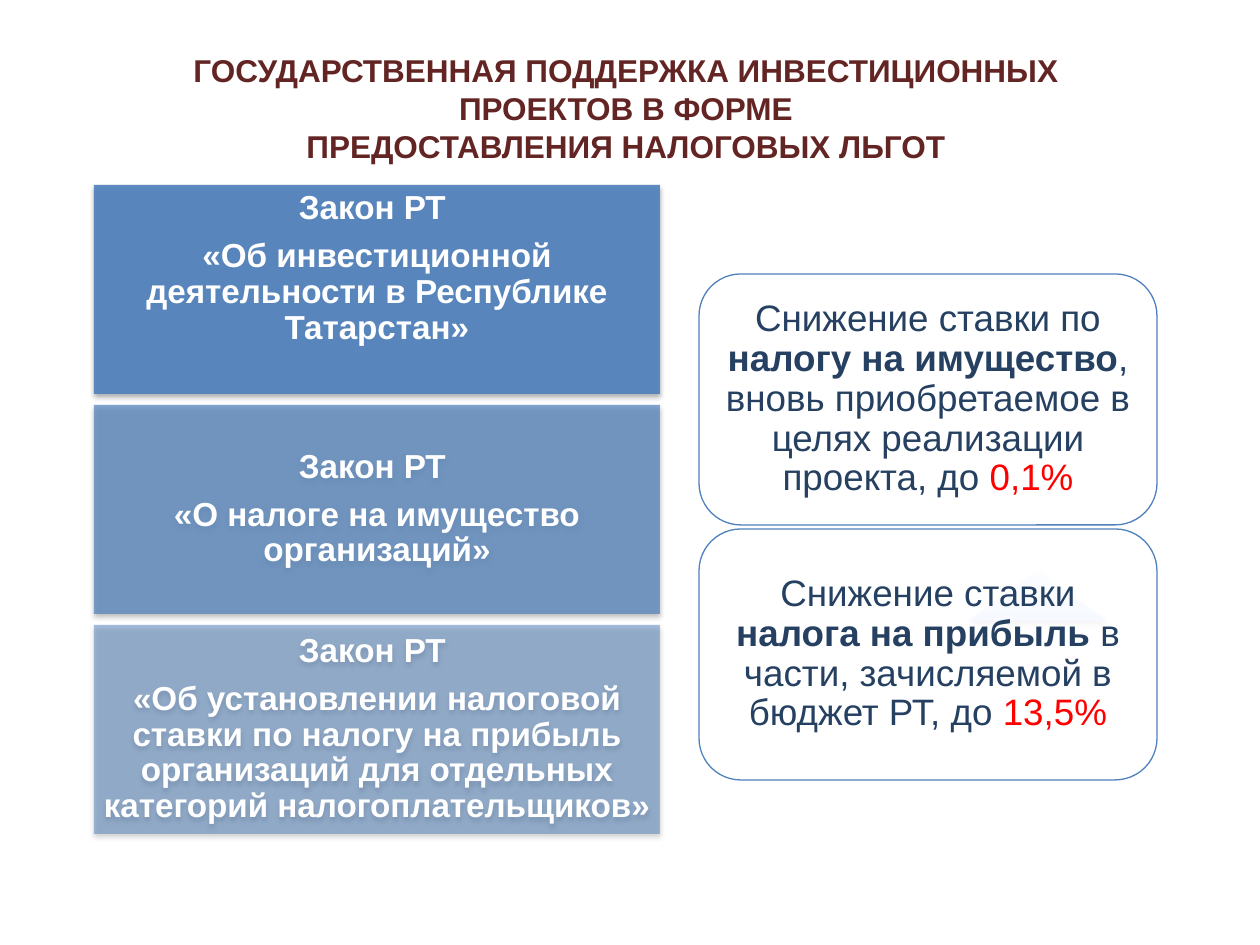
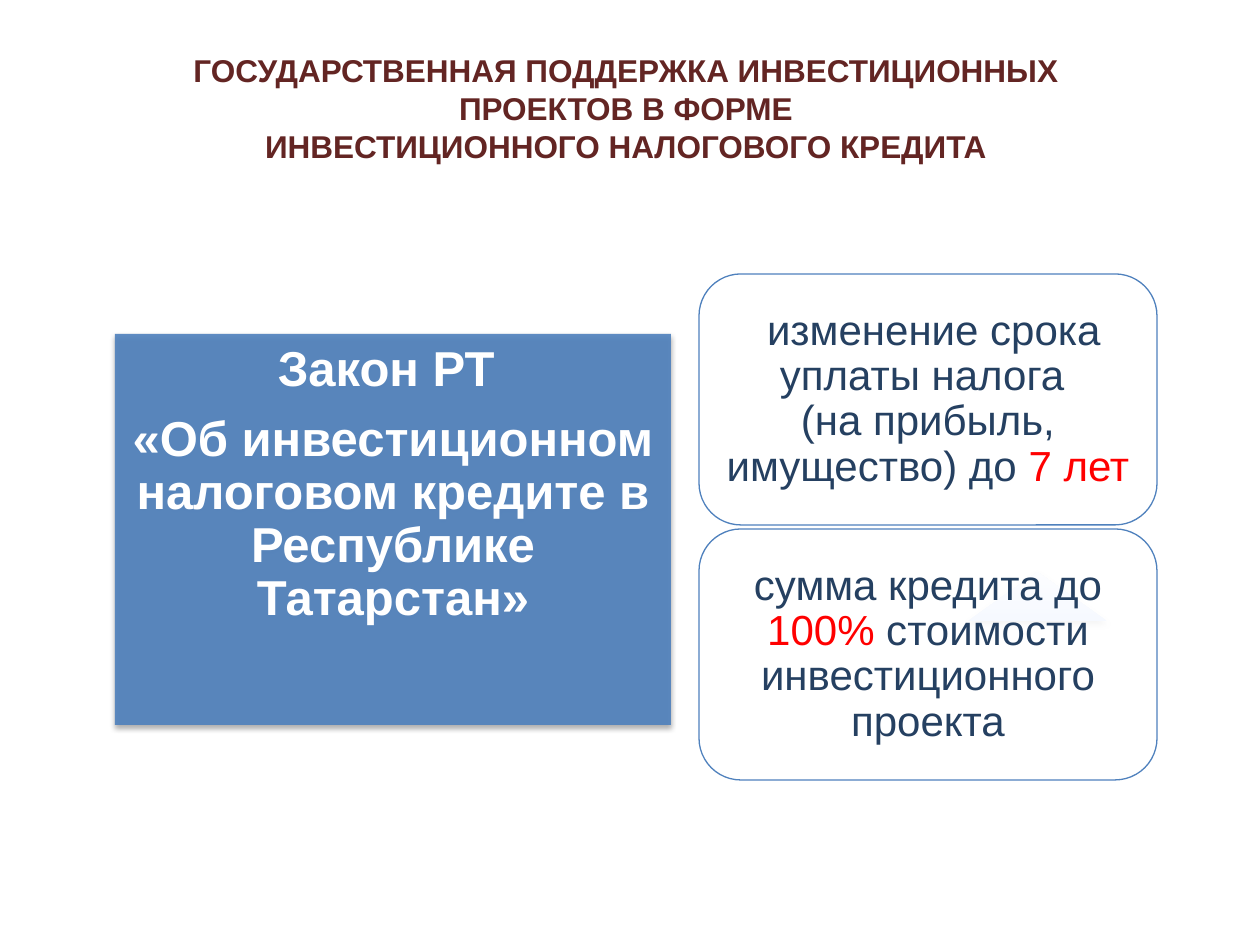
"""Build two slides on regional state support for investment projects."""
from copy import deepcopy

from lxml import etree
from pptx import Presentation
from pptx.dml.color import RGBColor
from pptx.enum.shapes import MSO_SHAPE
from pptx.enum.text import MSO_ANCHOR, MSO_AUTO_SIZE, PP_ALIGN
from pptx.oxml.ns import qn
from pptx.util import Pt

RECTANGLE = MSO_SHAPE.RECTANGLE
ROUNDED = MSO_SHAPE.ROUNDED_RECTANGLE
TRIANGLE = MSO_SHAPE.ISOSCELES_TRIANGLE
TOP, MIDDLE = MSO_ANCHOR.TOP, MSO_ANCHOR.MIDDLE
CENTER = PP_ALIGN.CENTER
NO_AUTOFIT = MSO_AUTO_SIZE.NONE

PX = 914400 / 126
COLORS = {
    "title": "632523",
    "blue": "4F81BD",
    "navy": "254061",
    "red": "FF0000",
    "white": "FFFFFF",
    "black": "000000",
}
GRADIENT = [(0, "A4C4FF"), (0.35, "BFD4FF"), (1, "E6EEFF")]
TITLE_START = "ГОСУДАРСТВЕННАЯ ПОДДЕРЖКА ИНВЕСТИЦИОННЫХ ПРОЕКТОВ В ФОРМЕ\n"
LAW = "Закон РТ "
LAW_STYLE = {"color": "white", "bold": True}
CARD_LEFT, CARD_TOP, CARD_WIDTH, CARD_HEIGHT, CARD_STEP = 699, 274, 458, 251, 255

SLIDES = [
    {
        "title": "ПРЕДОСТАВЛЕНИЯ НАЛОГОВЫХ ЛЬГОТ",
        "law_place": (94, 185, 566, 209),
        "law_step": 220,
        "law_size": 19,
        "law_inset": 6,
        "laws": [
            ("«Об инвестиционной деятельности в Республике Татарстан»", 90, TOP),
            ("«О налоге на имущество организаций»", 70, MIDDLE),
            ("«Об установлении налоговой ставки по налогу на прибыль организаций "
             "для отдельных категорий налогоплательщиков»", 50, MIDDLE),
        ],
        "card_size": 21,
        "card_inset": 11,
        "cards": [
            [("Снижение ставки по ", {}),
             ("налогу на имущество", {"bold": True}),
             (", вновь приобретаемое в целях реализации проекта, до ", {}),
             ("0,1%", {"color": "red"})],
            [("Снижение ставки ", {}),
             ("налога на прибыль", {"bold": True}),
             (" в части, зачисляемой в бюджет РТ, до ", {}),
             ("13,5%", {"color": "red"})],
        ],
    },
    {
        "title": "ИНВЕСТИЦИОННОГО НАЛОГОВОГО КРЕДИТА",
        "law_place": (115, 334, 556, 391),
        "law_step": 0,
        "law_size": 28,
        "law_inset": 10,
        "laws": [
            ("«Об инвестиционном налоговом кредите в Республике Татарстан»", 90, TOP),
        ],
        "card_size": 24,
        "card_inset": 12,
        "cards": [
            [(" изменение срока уплаты налога \n(на прибыль, имущество) до ", {}),
             ("7 лет", {"color": "red"})],
            [("сумма кредита до ", {}),
             ("100%", {"color": "red"}),
             (" стоимости инвестиционного проекта", {})],
        ],
    },
]


def write_text(box, paragraphs, size, anchor, insets, spacing, gap):
    """Fill a shape with centred paragraphs made of (text, style) runs."""
    frame = box.text_frame
    across, down = (round(inset * PX) for inset in insets)
    settings = {
        "word_wrap": True, "auto_size": NO_AUTOFIT, "vertical_anchor": anchor,
        "margin_left": across, "margin_right": across,
        "margin_top": down, "margin_bottom": down,
    }
    for name, value in settings.items():
        setattr(frame, name, value)
    for index, runs in enumerate(paragraphs):
        para = frame.add_paragraph() if index else frame.paragraphs[0]
        settings = {"alignment": CENTER, "line_spacing": spacing,
                    "space_before": Pt(0), "space_after": Pt(size * gap)}
        for name, value in settings.items():
            setattr(para, name, value)
        for text, style in runs:
            for part, line in enumerate(text.split("\n")):
                if part:
                    para.add_line_break()
                span = para.add_run()
                span.text = line
                settings = {"name": "Arial", "size": Pt(size), "bold": style.get("bold", False)}
                for name, value in settings.items():
                    setattr(span.font, name, value)
                color = COLORS[style.get("color", "navy")]
                span.font.color.rgb = RGBColor.from_string(color)
                if part:
                    line_break = span._r.getprevious()
                    line_break.append(deepcopy(span._r.rPr))


def add_panel(page, kind, place, opacity=None, fill=None, line=None, shadow=None):
    """Add a shape with an optional translucent fill, outline and (alpha, distance) shadow."""
    box = page.shapes.add_shape(kind, *(round(length * PX) for length in place))
    box.shadow.inherit = False
    if fill:
        box.fill.solid()
        box.fill.fore_color.rgb = RGBColor.from_string(COLORS[fill])
        color = box._element.spPr.find(f"{qn('a:solidFill')}/{qn('a:srgbClr')}")
        etree.SubElement(color, qn("a:alpha"), val=str(opacity * 1000))
    if line:
        box.line.color.rgb = RGBColor.from_string(COLORS[line])
        box.line.width = Pt(0.75)
    else:
        box.line.fill.background()
    if shadow:
        alpha, distance = shadow
        effects = box._element.spPr.find(qn("a:effectLst"))
        outer = etree.SubElement(effects, qn("a:outerShdw"), blurRad="40000",
                                 dist=str(distance), dir="5400000", rotWithShape="0")
        color = etree.SubElement(outer, qn("a:srgbClr"), val=COLORS["black"])
        etree.SubElement(color, qn("a:alpha"), val=str(alpha * 1000))
    return box


deck = Presentation()
deck.slide_width = round(1260 * PX)
deck.slide_height = round(945 * PX)

for content in SLIDES:
    page = deck.slides.add_slide(deck.slide_layouts[5])
    title = page.shapes.title
    for name, length in {"left": 115, "top": 45, "width": 1022, "height": 127}.items():
        setattr(title, name, round(length * PX))
    heading = (TITLE_START + content["title"], {"color": "title", "bold": True})
    write_text(title, [[heading]], 18, TOP, (13, 6), 1.0, 0)

    arrow = add_panel(page, TRIANGLE, (968, 572, 139, 49), shadow=(38, 20000))
    arrow.fill.gradient()
    arrow.fill.gradient_angle = 90
    stop_list = arrow._element.spPr.find(f"{qn('a:gradFill')}/{qn('a:gsLst')}")
    stop_list.append(deepcopy(stop_list[0]))
    for stop, (position, color) in zip(arrow.fill.gradient_stops, GRADIENT):
        stop.position = position
        stop.color.rgb = RGBColor.from_string(color)

    for row, runs in enumerate(content["cards"]):
        place = (CARD_LEFT, CARD_TOP + row * CARD_STEP, CARD_WIDTH, CARD_HEIGHT)
        card = add_panel(page, ROUNDED, place, 90, "white", line="blue")
        inset = content["card_inset"]
        write_text(card, [runs], content["card_size"], MIDDLE, (inset, inset), 0.9, 0.35)

    left, top, width, height = content["law_place"]
    for row, (name, opacity, anchor) in enumerate(content["laws"]):
        place = (left, top + row * content["law_step"], width, height)
        law = add_panel(page, RECTANGLE, place, opacity, "blue", shadow=(35, 23000))
        inset = content["law_inset"]
        paragraphs = [[(LAW, LAW_STYLE)], [(name, LAW_STYLE)]]
        write_text(law, paragraphs, content["law_size"], anchor, (inset, inset), 0.9, 0.35)

deck.save("out.pptx")
